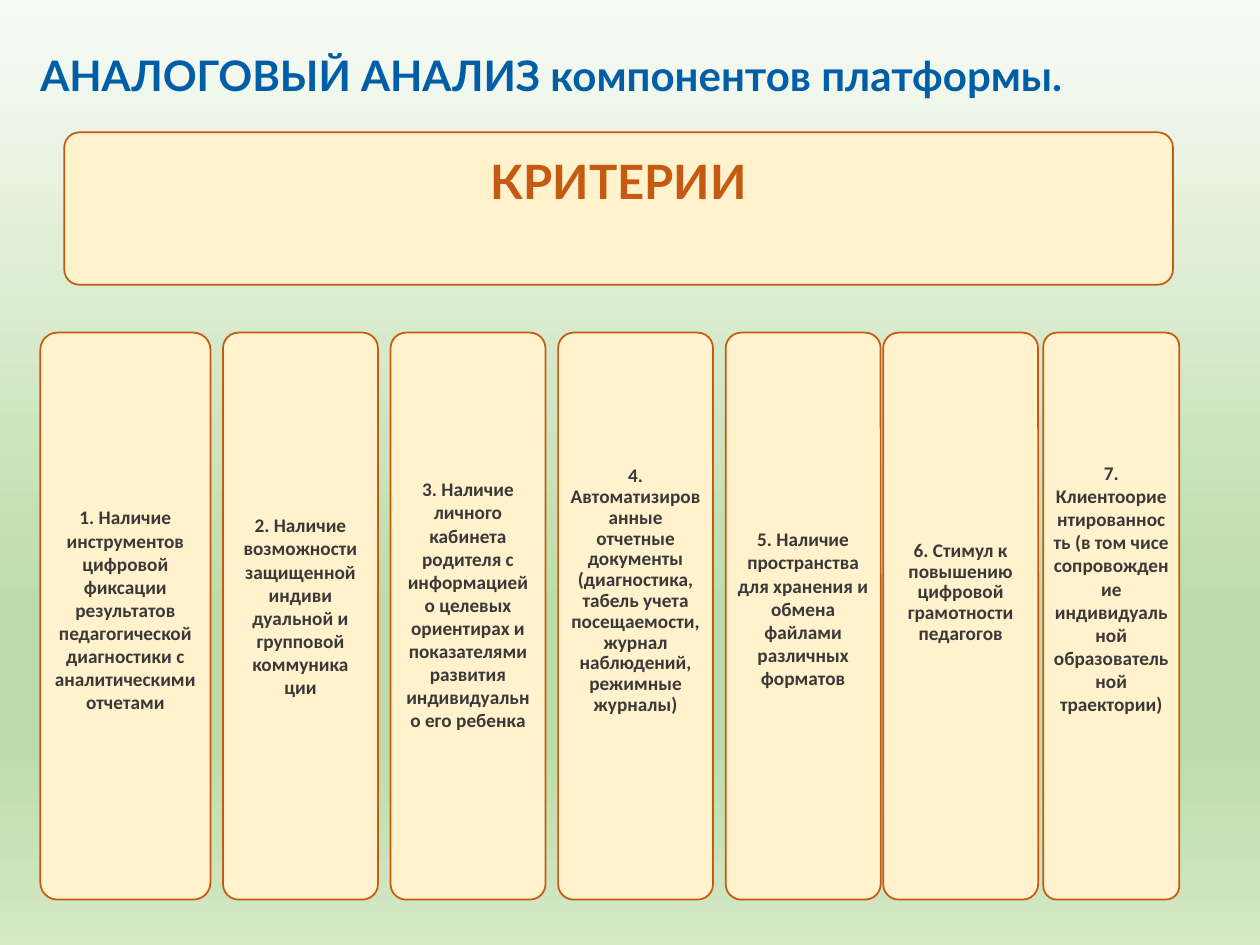
from dataclasses import dataclass

from lxml import etree
from pptx import Presentation
from pptx.dml.color import RGBColor
from pptx.enum.shapes import MSO_SHAPE
from pptx.enum.text import MSO_ANCHOR, PP_ALIGN
from pptx.oxml.ns import qn
from pptx.util import Inches, Pt

ROUND = MSO_SHAPE.ROUNDED_RECTANGLE
MIDDLE, TOP = MSO_ANCHOR.MIDDLE, MSO_ANCHOR.TOP
CENTER = PP_ALIGN.CENTER


@dataclass(frozen=True)
class Theme:
    blue: str = "005EA6"
    cream: str = "FFF2CC"
    rust: str = "C55A11"
    gray: str = "3B3838"
    back: tuple = ((0, "F8FBF6"), (64, "BEDCAA"), (79, "BEDCAA"), (100, "D4E8C6"))
    head_font: str = "Lato"
    body_font: str = "Calibri"
    title: int = 24
    head: int = 27
    body: int = 11


theme = Theme()


def write(par, text, font, size, color):
    run = par.add_run()
    run.text = text
    run.font.name = font
    run.font.size = Pt(size)
    run.font.bold = True
    run.font.color.rgb = RGBColor.from_string(color)


def add_card(slide, left, top, width, height, pad, lift):
    """Add a rounded card whose text sits lift / 2 above the middle."""
    card = slide.shapes.add_shape(
        ROUND, Inches(left), Inches(top), Inches(width), Inches(height))
    card.adjustments[0] = 0.1
    card.shadow.inherit = False
    card.fill.solid()
    card.fill.fore_color.rgb = RGBColor.from_string(theme.cream)
    card.line.color.rgb = RGBColor.from_string(theme.rust)
    card.line.width = Pt(1)
    frame = card.text_frame
    frame.word_wrap = True
    frame.vertical_anchor = MIDDLE
    frame.margin_left = frame.margin_right = frame.margin_top = Inches(pad)
    frame.margin_bottom = Inches(pad + lift)
    return frame


prs = Presentation()
prs.slide_width, prs.slide_height = Inches(10), Inches(7.5)
slide = prs.slides.add_slide(prs.slide_layouts[6])

# Background gradient, running from top to bottom
fill = slide.background.fill
fill.gradient()
fill.gradient_angle = 270
stops = slide._element.find(".//" + qn("a:gsLst"))
for stop in list(stops):
    stops.remove(stop)
for pos, color in theme.back:
    stop = etree.SubElement(stops, qn("a:gs"), pos=str(pos * 1000))
    etree.SubElement(stop, qn("a:srgbClr"), val=color)

# Title
box = slide.shapes.add_textbox(Inches(0.32), Inches(0.3), Inches(9.18), Inches(1.05))
frame = box.text_frame
frame.word_wrap = True
frame.vertical_anchor = TOP
frame.margin_left = frame.margin_right = 0
par = frame.paragraphs[0]
par.line_spacing = Pt(32)
write(par, "АНАЛОГОВЫЙ АНАЛИЗ компонентов платформы.",
      theme.head_font, theme.title, theme.blue)

# Heading card
frame = add_card(slide, 0.51, 1.05, 8.8, 1.21, 0.11, 0.44)
par = frame.paragraphs[0]
par.alignment = CENTER
write(par, "КРИТЕРИИ", theme.head_font, theme.head, theme.rust)

# Criteria: left, width, lift, line spacing, paragraphs
wide, step, first = 1.23, 1.33, 1.77
criteria = [
    (0.32, 1.35, 0.10, 1.0, [
        "1. Наличие инструментов цифровой фиксации результатов "
        "педагогической диагностики с аналитическими отчетами"]),
    (first, wide, 0.16, 1.0, [
        "2. Наличие возможности защищенной индиви",
        "дуальной и групповой коммуника",
        "ции"]),
    (first + step, wide, 0.18, 1.0, [
        "3. Наличие личного кабинета родителя с информацией о целевых "
        "ориентирах и показателями развития индивидуально его ребенка"]),
    (first + 2 * step, wide, 0.4, 0.9, [
        "4. Автоматизированные отчетные документы (диагностика, табель учета "
        "посещаемости, журнал наблюдений, режимные журналы)"]),
    (first + 3 * step, wide, 0.12, 1.0, [
        "5. Наличие пространства для хранения и обмена файлами "
        "различных форматов"]),
    (7.01, wide, 0.37, 0.9, [
        "6. Стимул к повышению цифровой грамотности педагогов"]),
    (8.28, 1.08, 0.44, 1.0, [
        "7. Клиентоориентированность (в том чисе сопровождение "
        "индивидуальной образовательной траектории)"]),
]
for left, width, lift, space, lines in criteria:
    frame = add_card(slide, left, 2.64, width, 4.5, 0.05, lift)
    for i, line in enumerate(lines):
        par = frame.add_paragraph() if i else frame.paragraphs[0]
        par.alignment = CENTER
        par.line_spacing = space
        write(par, line, theme.body_font, theme.body, theme.gray)

prs.save("out.pptx")
